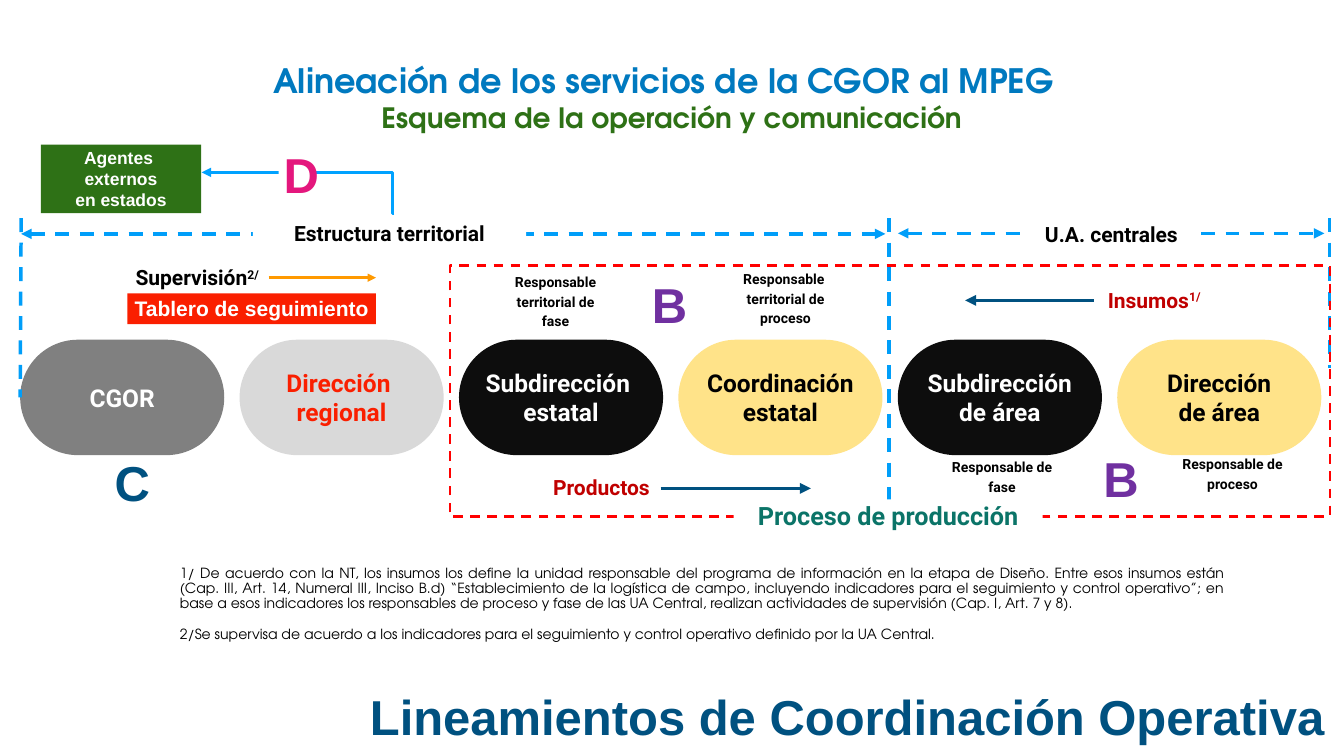
from dataclasses import dataclass

from lxml import etree
from pptx import Presentation
from pptx.dml.color import RGBColor
from pptx.enum.dml import MSO_LINE
from pptx.enum.shapes import MSO_CONNECTOR, MSO_SHAPE
from pptx.enum.text import MSO_ANCHOR, PP_ALIGN
from pptx.oxml.ns import qn
from pptx.util import Inches, Pt

DASH = MSO_LINE.DASH
STRAIGHT, ELBOW = MSO_CONNECTOR.STRAIGHT, MSO_CONNECTOR.ELBOW
RECT, ROUND = MSO_SHAPE.RECTANGLE, MSO_SHAPE.ROUNDED_RECTANGLE
TOP, MIDDLE = MSO_ANCHOR.TOP, MSO_ANCHOR.MIDDLE
CENTER, JUSTIFY = PP_ALIGN.CENTER, PP_ALIGN.JUSTIFY

COLORS = {
    "white": "FFFFFF", "black": "000000", "ink": "0D0D0D", "gray": "808080",
    "pale": "D9D9D9", "sand": "FFE389", "red": "FA1F00", "frame": "FF0000",
    "wine": "C00000", "sky": "009EF9", "bend": "00A2FF", "navy": "005180",
    "blue": "0079BF", "green": "2E7116", "teal": "0B7468", "gold": "FF9900",
    "plum": "7030A0", "pink": "E4177D",
}
SANS, LABEL, TITLE = "Arial", "Roboto", "TeX Gyre Adventor"


@dataclass
class Box:
    x: float
    y: float
    w: float
    h: float
    lines: tuple[str, ...]
    size: float
    color: str = "black"
    font: str = LABEL
    fill: str = ""
    bold: bool = True
    kind: int = RECT
    anchor: int = MIDDLE
    align: int = CENTER
    wrap: bool = True
    pitch: float | None = None
    gap: float = 0
    sup: str = ""


@dataclass
class Line:
    x1: float
    y1: float
    x2: float
    y2: float
    color: str = "sky"
    width: float = 5
    dash: bool = True
    head: bool = False
    tail: bool = False
    kind: int = STRAIGHT


def rgb(name: str) -> RGBColor:
    return RGBColor.from_string(COLORS[name])


def draw_box(slide, box: Box):
    area = [Inches(v) for v in (box.x, box.y, box.w, box.h)]
    if box.fill:
        shape = slide.shapes.add_shape(box.kind, *area)
        shape.shadow.inherit = False
        shape.fill.solid()
        shape.fill.fore_color.rgb = rgb(box.fill)
        shape.line.fill.background()
        if box.kind == ROUND:
            shape.adjustments[0] = 0.5
    else:
        shape = slide.shapes.add_textbox(*area)
    frame = shape.text_frame
    frame.word_wrap = box.wrap
    frame.vertical_anchor = box.anchor
    for i, text in enumerate(box.lines):
        par = frame.paragraphs[0] if i == 0 else frame.add_paragraph()
        par.alignment = box.align
        if box.pitch:
            par.line_spacing = box.pitch
        if i and box.gap:
            par.space_before = Pt(box.gap)
        par.font.name = box.font
        par.font.size = Pt(box.size)
        par.font.bold = box.bold
        par.font.color.rgb = rgb(box.color)
        par.add_run().text = text
        if box.sup:
            run = par.add_run()
            run.text = box.sup
            run.font._element.set("baseline", "30000")
    return shape


def draw_line(slide, line: Line):
    ends = [Inches(v) for v in (line.x1, line.y1, line.x2, line.y2)]
    wire = slide.shapes.add_connector(line.kind, *ends)
    wire.line.color.rgb = rgb(line.color)
    wire.line.width = Pt(line.width)
    if line.dash:
        wire.line.dash_style = DASH
    stroke = wire.line._get_or_add_ln()
    for tag, shown in (("a:headEnd", line.head), ("a:tailEnd", line.tail)):
        if shown:
            etree.SubElement(stroke, qn(tag), type="triangle")
    props = wire._element.spPr
    etree.SubElement(props, qn("a:effectLst"))
    if line.kind == ELBOW:
        guides = props.find(qn("a:prstGeom")).get_or_add_avLst()
        etree.SubElement(guides, qn("a:gd"), name="adj1", fmla="val 800")
    return wire


def draw_frame(slide) -> None:
    frame = slide.shapes.add_shape(
        RECT, Inches(8.93), Inches(5.27), Inches(17.46), Inches(4.98))
    frame.shadow.inherit = False
    frame.fill.background()
    frame.line.color.rgb = rgb("frame")
    frame.line.width = Pt(3.5)
    frame.line.dash_style = DASH


def tag(x: float, y: float, w: float, h: float, text: str,
        color: str = "black", size: float = 30, sup: str = "") -> Box:
    return Box(x, y, w, h, (text,), size, color, fill="white", sup=sup)


def role(x: float, y: float, w: float, h: float, *lines: str, fill: str = "") -> Box:
    return Box(x, y, w, h, lines, 20, fill=fill, pitch=Pt(14), gap=14)


def letter(x: float, y: float, text: str, color: str) -> Box:
    return Box(x, y, 0.91, 1.28, (text,), 70, color, SANS, anchor=TOP, wrap=False)


RULES = [
    Line(0.42, 4.64, 17.57, 4.64, head=True, tail=True),
    Line(26.38, 4.33, 26.38, 7.31),
    Line(17.64, 4.33, 17.64, 10.29),
    Line(17.82, 4.63, 26.28, 4.63, head=True, tail=True),
]
PILLS = [
    (("CGOR",), "white", "gray"),
    (("Dirección ", "regional"), "red", "pale"),
    (("Subdirección ", "estatal"), "white", "ink"),
    (("Coordinación estatal",), "black", "sand"),
    (("Subdirección de área",), "white", "ink"),
    (("Dirección", "de área"), "black", "sand"),
]
TAGS = [
    tag(14.56, 9.91, 6.13, 0.63, "Proceso de producción", "teal", 36),
    tag(20.35, 4.46, 3.41, 0.36, "U.A. centrales"),
    tag(5.02, 4.36, 5.42, 0.55, "Estructura territorial"),
    tag(21.36, 5.55, 3.09, 0.79, "Insumos", "wine", sup="1/"),
    tag(10.5, 9.52, 2.87, 0.28, "Productos", "wine"),
    tag(1.68, 5.34, 4.53, 0.31, "Supervisión", sup="2/ "),
]
FLOWS = [
    Line(13.11, 9.69, 16.09, 9.69, "navy", 5.25, False, tail=True),
    Line(21.7, 5.96, 19.15, 5.96, "navy", 5.25, False, tail=True),
    Line(5.33, 5.51, 7.46, 5.51, "gold", 4, False, tail=True),
]
NOTES = (
    "1/ De acuerdo con la NT, los insumos los define la unidad responsable del programa "
    "de información en la etapa de Diseño. Entre esos insumos están (Cap. III, Art. 14, "
    "Numeral III, Inciso B.d) “Establecimiento de la logística de campo, incluyendo "
    "indicadores para el seguimiento y control operativo”; en base a esos indicadores los "
    "responsables de proceso y fase de las UA Central, realizan actividades de supervisión "
    "(Cap. I, Art. 7 y 8).",
    "2/Se supervisa de acuerdo a los indicadores para el seguimiento y control operativo "
    "definido por la UA Central.",
)
TEXTS = [
    Box(7.24, 13.54, 19.15, 1.31, ("Lineamientos de Coordinación Operativa",), 70,
        "navy", SANS, wrap=False),
    role(22.63, 9.06, 3.66, 0.83, "Responsable de", "proceso", fill="white"),
    role(18.14, 8.84, 3.49, 1.39, "Responsable de", "fase"),
    role(13.76, 5.58, 3.66, 0.83, "Responsable ", "territorial de", "proceso"),
    role(9.28, 5.36, 3.49, 1.39, "Responsable", "territorial de", "fase"),
    Box(2.53, 5.82, 4.93, 0.61, ("Tablero de seguimiento",), 30, "white", SANS,
        "red", anchor=TOP, wrap=False),
    Box(7.4, 2.02, 11.85, 0.71, ("Esquema de la operación y comunicación",), 40,
        "green", TITLE, anchor=TOP, wrap=False, pitch=0.9),
    Box(1.93, 1.13, 22.47, 0.91, ("Alineación de los servicios de la CGOR al MPEG",), 48,
        "blue", TITLE, anchor=TOP),
    Box(3.47, 11.19, 20.93, 1.62, NOTES, 20, font=TITLE, bold=False, anchor=TOP,
        align=JUSTIFY, pitch=0.9, gap=22),
    letter(12.83, 5.4, "B", "plum"),
    letter(21.79, 8.84, "B", "plum"),
    letter(2.17, 8.92, "C", "navy"),
    Box(0.81, 2.87, 3.18, 1.36, ("Agentes ", "externos", "en estados"), 25, "white",
        SANS, "green", anchor=TOP),
]
BEND = Line(7.82, 4.23, 4, 3.42, "bend", 4.5, False, tail=True, kind=ELBOW)
MARK = Box(5.53, 2.81, 0.74, 1.31, ("D",), 70, "pink", SANS, "white", anchor=TOP)


def main() -> None:
    deck = Presentation()
    deck.slide_width, deck.slide_height = Inches(26.67), Inches(15)
    slide = deck.slides.add_slide(deck.slide_layouts[6])
    for line in RULES:
        draw_line(slide, line)
    pills = [
        draw_box(slide, Box(0.4 + 4.354 * i, 6.74, 4.05, 2.29, lines, 35, color,
                            fill=fill, kind=ROUND))
        for i, (lines, color, fill) in enumerate(PILLS)
    ]
    draw_frame(slide)
    edge = draw_line(slide, Line(0.42, 4.33, 0.4, 7.88))
    edge.end_connect(pills[0], 1)
    for box in TAGS:
        draw_box(slide, box)
    for line in FLOWS:
        draw_line(slide, line)
    for box in TEXTS:
        draw_box(slide, box)
    draw_line(slide, BEND)
    draw_box(slide, MARK)
    deck.save("out.pptx")


if __name__ == "__main__":
    main()
